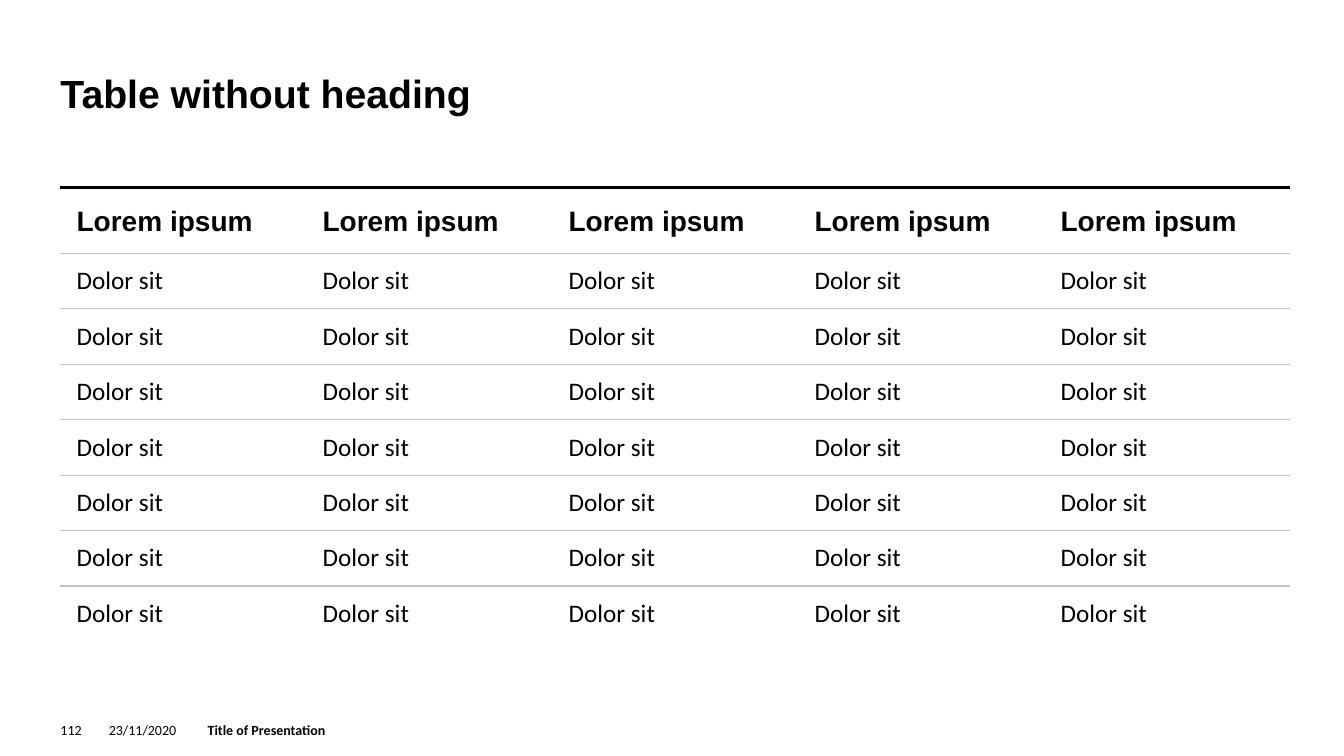
from lxml import etree
from pptx import Presentation
from pptx.dml.color import RGBColor
from pptx.enum.text import MSO_ANCHOR
from pptx.oxml.ns import qn
from pptx.util import Inches, Pt

TOP, MIDDLE, BOTTOM = MSO_ANCHOR.TOP, MSO_ANCHOR.MIDDLE, MSO_ANCHOR.BOTTOM
BLACK, GREY = "000000", "BDC4CA"

HEAD = ["Lorem ipsum"] * 5
BODY = [["Dolor sit"] * 5] * 7
TABLE_LEFT, TABLE_TOP, COL_W, HEAD_H, ROW_H = 0.6, 1.86, 2.44, 0.63, 0.55

TITLE_FONT = {"name": "Arial", "size": Pt(28), "bold": True}
HEAD_FONT = {"name": "Arial", "size": Pt(20), "bold": True}
BODY_FONT = {"name": "Calibri", "size": Pt(18), "bold": False}
FOOT_FONT = {"name": "Calibri", "size": Pt(10), "bold": False}
FOOT_BOLD = {**FOOT_FONT, "bold": True}

# text, (left, top, width, height), anchor, font
TEXTS = [
    ("Table without heading", (0.6, 0.68, 12.21, 0.47), BOTTOM, TITLE_FONT),
    ("23/11/2020", (1.08, 7.16, 0.87, 0.16), MIDDLE, FOOT_FONT),
    ("Title of Presentation", (2.06, 7.16, 8.43, 0.16), MIDDLE, FOOT_BOLD),
    ("112", (0.6, 7.16, 0.31, 0.16), MIDDLE, FOOT_FONT),
]


def color(code):
    return RGBColor.from_string(code)


def write(frame, text, font):
    para = frame.paragraphs[0]
    run = para.add_run()
    run.text = text
    for key, value in font.items():
        setattr(run.font, key, value)
    run.font.color.rgb = color(BLACK)


def pad(part, side, edge):
    """Set the inner margins of a cell or text frame, in inches."""
    part.margin_left = part.margin_right = Inches(side)
    part.margin_top = part.margin_bottom = Inches(edge)


def border(cell, lines):
    """Draw cell borders; lines maps a side to (colour, points)."""
    props = cell._tc.get_or_add_tcPr()
    for index, side in enumerate("LRTB"):
        line = etree.Element(qn(f"a:ln{side}"))
        if side in lines:
            code, width = lines[side]
            line.set("w", str(Pt(width)))
            fill = etree.SubElement(line, qn("a:solidFill"))
            etree.SubElement(fill, qn("a:srgbClr"), val=code)
        else:
            etree.SubElement(line, qn("a:noFill"))
        props.insert(index, line)


def add_text(slide, text, place, anchor, font):
    box = slide.shapes.add_textbox(*map(Inches, place))
    frame = box.text_frame
    frame.word_wrap = True
    frame.vertical_anchor = anchor
    pad(frame, 0, 0)
    write(frame, text, font)


def add_grid(slide):
    rows = [HEAD] + BODY
    heights = [HEAD_H] + [ROW_H] * len(BODY)
    shape = slide.shapes.add_table(
        len(rows), len(HEAD), Inches(TABLE_LEFT), Inches(TABLE_TOP),
        Inches(COL_W * len(HEAD)), Inches(sum(heights)))
    table = shape.table
    table.first_row = table.horz_banding = False
    for col in table.columns:
        col.width = Inches(COL_W)
    for r, (row, height) in enumerate(zip(rows, heights)):
        table.rows[r].height = Inches(height)
        lines = {"T": (GREY, 1) if r else (BLACK, 3)}
        if r < len(rows) - 1:
            lines["B"] = (GREY, 1)
        for c, text in enumerate(row):
            cell = table.cell(r, c)
            cell.fill.background()
            cell.vertical_anchor = MIDDLE if r else BOTTOM
            pad(cell, 0.16, 0.08 if r else 0.16)
            border(cell, lines)
            write(cell.text_frame, text, BODY_FONT if r else HEAD_FONT)


def main():
    deck = Presentation()
    deck.slide_width, deck.slide_height = Inches(13.33), Inches(7.5)
    slide = deck.slides.add_slide(deck.slide_layouts[6])
    title, *footer = TEXTS
    add_text(slide, *title)
    add_grid(slide)
    for item in footer:
        add_text(slide, *item)
    deck.save("out.pptx")


if __name__ == "__main__":
    main()
